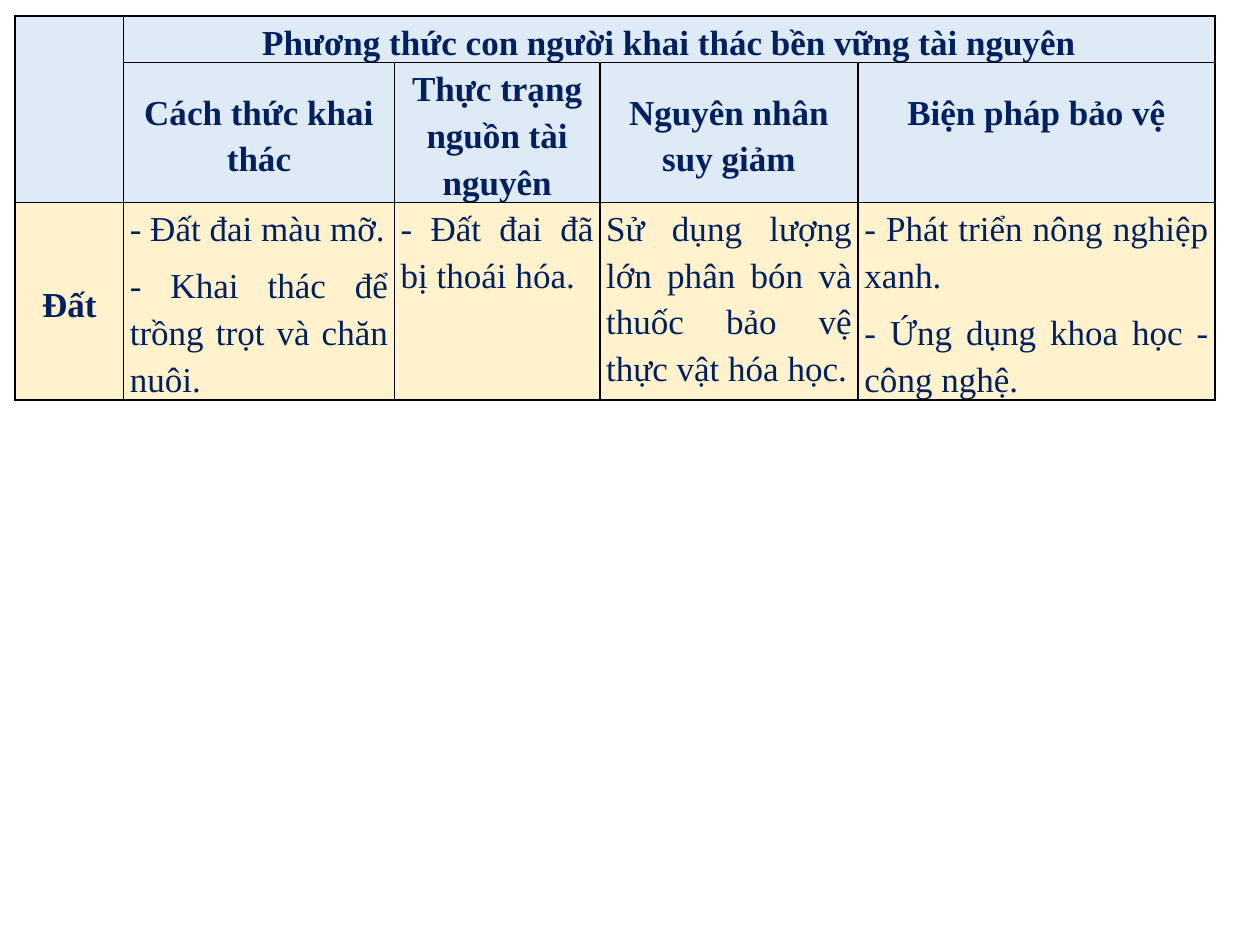
import pptx
import pptx.util
import pptx.dml.color
import pptx.enum.text
import lxml.etree

Pt = pptx.util.Pt
RGB = pptx.dml.color.RGBColor
ALIGN = pptx.enum.text.PP_ALIGN
ANCHOR = pptx.enum.text.MSO_ANCHOR


class Theme:
    font = "Times New Roman"
    size = Pt(20)
    ink = RGB.from_string("002060")
    head = RGB.from_string("DEEAF6")
    body = RGB.from_string("FFF2CC")
    line = "000000"
    rule = Pt(1)
    para = {"line_spacing": 1.2, "space_before": Pt(6)}
    inset = {"margin_left": Pt(3.6), "margin_right": Pt(3.6),
             "margin_top": 0, "margin_bottom": 0}


COLS = [62, 154.8, 117.4, 147.6, 203.8]
ROWS = [26.6, 80, 112.6]
TITLE = "Phương thức con người khai thác bền vững tài nguyên"
HEADS = ["Cách thức khai thác", "Thực trạng nguồn tài nguyên",
         "Nguyên nhân suy giảm", "Biện pháp bảo vệ"]
TOPIC = "Đất"
NOTES = [
    ["- Đất đai màu mỡ.", "- Khai thác để trồng trọt và chăn nuôi."],
    ["- Đất đai đã bị thoái hóa."],
    ["Sử dụng lượng lớn phân bón và thuốc bảo vệ thực vật hóa học."],
    ["- Phát triển nông nghiệp xanh.", "- Ứng dụng khoa học - công nghệ."],
]


def apply(item, values):
    for name, value in values.items():
        setattr(item, name, value)


def frame(cell):
    """Draw a thin rule on all four sides of a cell."""
    space = pptx.oxml.ns.qn
    props = cell._tc.get_or_add_tcPr()
    for side in "LRTB":
        edge = lxml.etree.SubElement(props, space("a:ln" + side), w=str(Theme.rule))
        fill = lxml.etree.SubElement(edge, space("a:solidFill"))
        lxml.etree.SubElement(fill, space("a:srgbClr"), val=Theme.line)


def write(cell, lines, bold=True, align=ALIGN.CENTER, anchor=ANCHOR.MIDDLE):
    cell.vertical_anchor = anchor
    cell.text_frame.text = "\n".join(lines)
    for para in cell.text_frame.paragraphs:
        apply(para, {**Theme.para, "alignment": align})
        font = para.runs[0].font
        apply(font, {"name": Theme.font, "size": Theme.size, "bold": bold})
        font.color.rgb = Theme.ink


def draw_table(slide, left, top):
    shape = slide.shapes.add_table(len(ROWS), len(COLS), Pt(left), Pt(top),
                                   Pt(sum(COLS)), Pt(sum(ROWS)))
    table = shape.table
    apply(table, {"first_row": False, "horz_banding": False})
    for col, width in zip(table.columns, COLS):
        col.width = Pt(width)
    for row, height in zip(table.rows, ROWS):
        row.height = Pt(height)

    # Cell rules, insets and fills
    for index, row in enumerate(table.rows):
        for cell in row.cells:
            frame(cell)
            apply(cell, Theme.inset)
            cell.fill.solid()
            cell.fill.fore_color.rgb = Theme.head if index < 2 else Theme.body

    # Merged heading cells
    table.cell(0, 0).merge(table.cell(1, 0))
    table.cell(0, 1).merge(table.cell(0, 4))
    write(table.cell(0, 1), [TITLE], anchor=ANCHOR.TOP)

    # Column heads and notes
    write(table.cell(2, 0), [TOPIC])
    for col, (head, notes) in enumerate(zip(HEADS, NOTES), 1):
        write(table.cell(1, col), [head])
        write(table.cell(2, col), notes, False, ALIGN.JUSTIFY, ANCHOR.TOP)

    # Lift the one-line head level with the first line of its neighbours
    table.cell(1, 4).margin_bottom = Pt(26.6)


def main():
    deck = pptx.Presentation()
    apply(deck, {"slide_width": Pt(720), "slide_height": Pt(540)})
    slide = deck.slides.add_slide(deck.slide_layouts[6])
    draw_table(slide, 8.6, 9.2)
    deck.save("out.pptx")


if __name__ == "__main__":
    main()
